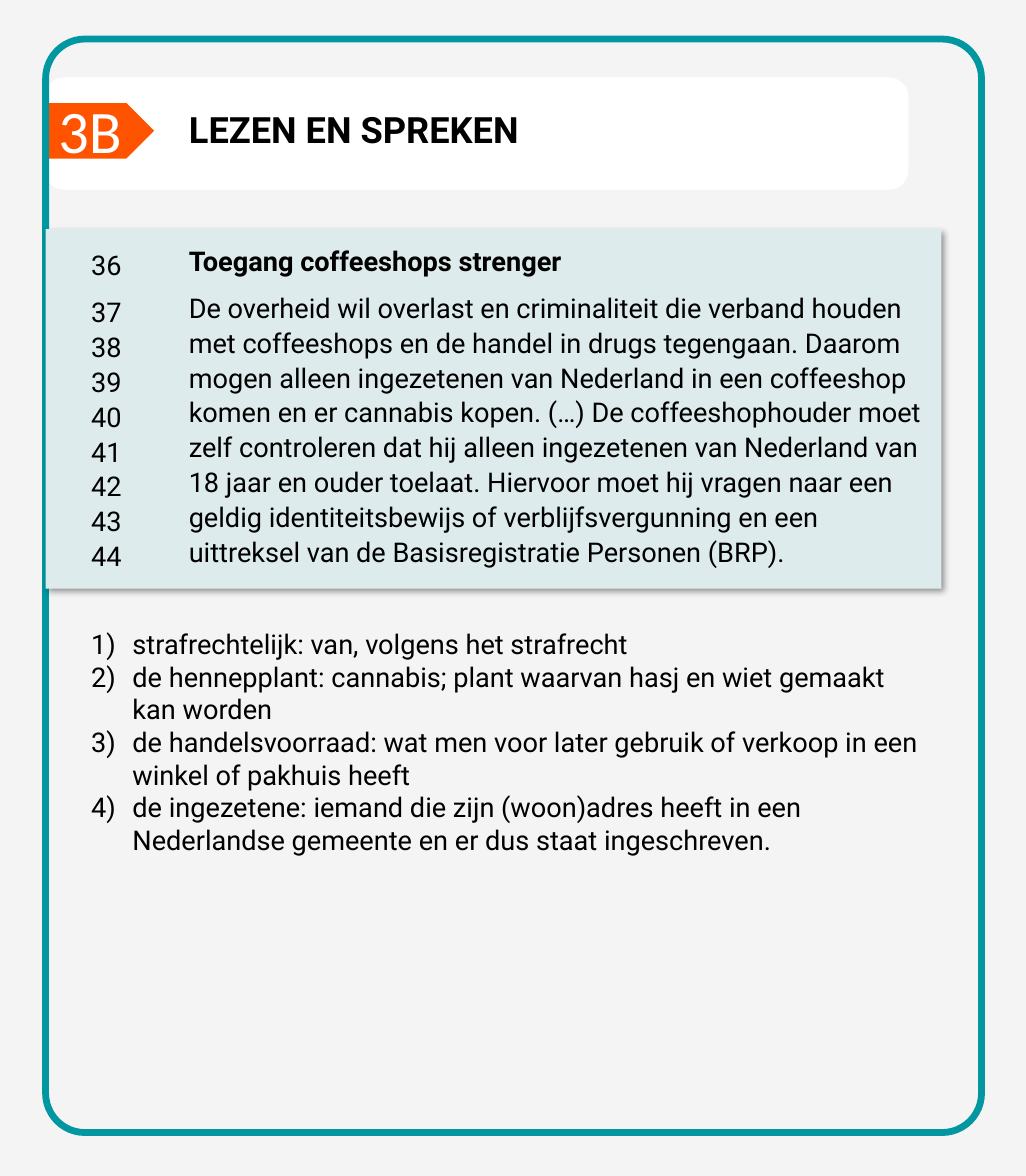
from lxml.etree import SubElement
from pptx import Presentation
from pptx.dml.color import RGBColor
from pptx.enum.shapes import MSO_SHAPE
from pptx.enum.text import MSO_ANCHOR, MSO_AUTO_SIZE, PP_ALIGN
from pptx.oxml.ns import qn
from pptx.util import Inches, Pt

WHITE, BLACK, ORANGE = "FFFFFF", "000000", "FF5300"
TEAL, PALE, GREY = "0097A1", "DEEBEC", "F4F4F4"

ARTICLE = (
    "De overheid wil overlast en criminaliteit die verband houden met coffeeshops "
    "en de handel in drugs tegengaan. Daarom mogen alleen ingezetenen van Nederland "
    "in een coffeeshop komen en er cannabis kopen. (…) De coffeeshophouder moet zelf "
    "controleren dat hij alleen ingezetenen van Nederland van 18 jaar en ouder "
    "toelaat. Hiervoor moet hij vragen naar een geldig identiteitsbewijs of "
    "verblijfsvergunning en een uittreksel van de Basisregistratie Personen (BRP)."
)
GLOSSARY = [
    "strafrechtelijk: van, volgens het strafrecht",
    "de hennepplant: cannabis; plant waarvan hasj en wiet gemaakt kan worden",
    "de handelsvoorraad: wat men voor later gebruik of verkoop in een winkel of "
    "pakhuis heeft",
    "de ingezetene: iemand die zijn (woon)adres heeft in een Nederlandse gemeente "
    "en er dus staat ingeschreven.",
]


def rgb(value):
    return RGBColor.from_string(value)


def apply(target, values):
    for name, value in values.items():
        setattr(target, name, value)


class Page:
    font = {"name": "Roboto", "size": Pt(18), "bold": False}
    frame = {"word_wrap": True, "auto_size": MSO_AUTO_SIZE.NONE,
             "vertical_anchor": MSO_ANCHOR.TOP}
    paragraph = {"alignment": PP_ALIGN.LEFT, "space_before": Pt(0)}
    prose = {"line_spacing": 1.07, "space_after": Pt(8)}

    def __init__(self, s):
        self.s = s
        s.background.fill.solid()
        s.background.fill.fore_color.rgb = rgb(GREY)

    def shape(self, kind, box, fill=None, line=None, width=1, corner=None):
        sp = self.s.shapes.add_shape(kind, *map(Inches, box))
        sp.shadow.inherit = False
        if corner is not None:
            sp.adjustments[0] = corner
        if fill:
            sp.fill.solid()
            sp.fill.fore_color.rgb = rgb(fill)
        else:
            sp.fill.background()
        if line:
            sp.line.color.rgb = rgb(line)
            sp.line.width = Pt(width)
        else:
            sp.line.fill.background()
        return sp

    def shadow(self, sp):
        effects = sp.element.spPr.find(qn("a:effectLst"))
        outer = SubElement(effects, qn("a:outerShdw"), blurRad=str(Pt(4)),
                           dist=str(Pt(3)), dir="2700000", algn="tl", rotWithShape="0")
        color = SubElement(outer, qn("a:srgbClr"), val=BLACK)
        SubElement(color, qn("a:alpha"), val="40000")

    def set_text(self, sp, texts, color=BLACK, layout={}, fonts=({},)):
        tf = sp.text_frame
        apply(tf, self.frame)
        for i, text in enumerate(texts):
            p = tf.add_paragraph() if i else tf.paragraphs[0]
            p.text = text
            apply(p, {**self.paragraph, **layout})
            for r in p.runs:
                apply(r.font, {**self.font, **fonts[min(i, len(fonts) - 1)]})
                r.font.color.rgb = rgb(color)

    def text(self, box, texts, **style):
        self.set_text(self.s.shapes.add_textbox(*map(Inches, box)), texts, **style)

    def placeholder(self, index, box, texts, **style):
        sp = self.s.placeholders[index]
        apply(sp, dict(zip(("left", "top", "width", "height"), map(Inches, box))))
        self.s.shapes.element.append(sp.element)
        self.set_text(sp, texts, **style)
        return sp

    def numbered(self, index, box, texts):
        sp = self.placeholder(index, box, texts)
        for p in sp.text_frame.paragraphs:
            props = p._p.get_or_add_pPr()
            props.set("marL", str(Inches(0.38)))
            props.set("indent", str(-Inches(0.38)))
            SubElement(props, qn("a:buFont"), typeface="+mj-lt")
            SubElement(props, qn("a:buAutoNum"), type="arabicParenR")


def main():
    prs = Presentation()
    prs.slide_width, prs.slide_height = Inches(9.45), Inches(10.83)
    page = Page(prs.slides.add_slide(prs.slide_layouts[1]))
    rounded = MSO_SHAPE.ROUNDED_RECTANGLE

    page.shape(rounded, (0.42, 0.72, 7.94, 1.02), fill=WHITE, line=WHITE)
    page.shape(MSO_SHAPE.PENTAGON, (0.42, 0.95, 1, 0.51), fill=ORANGE)
    page.text((0.44, 0.81, 0.82, 0.77), ["3B"], color=WHITE,
              fonts=[{"name": "Calibri", "size": Pt(40)}])
    page.placeholder(0, (1.64, 0.94, 6.88, 0.5), ["LEZEN EN SPREKEN"],
                     fonts=[{"size": Pt(24), "bold": True}])
    page.shape(rounded, (0.42, 0.36, 8.62, 10.07), line=TEAL, width=4.5, corner=0.042)

    panel = page.shape(rounded, (0.42, 2.11, 8.25, 3.31), fill=PALE, corner=0)
    page.shadow(panel)
    page.text((1.64, 2.18, 7.02, 3.11), ["Toegang coffeeshops strenger", ARTICLE],
              layout=page.prose, fonts=[{"bold": True}, {}])
    page.text((0.74, 2.22, 0.49, 3.11), ["36", "\v".join(map(str, range(37, 45)))],
              layout=page.prose)
    page.numbered(1, (0.74, 5.73, 7.92, 2.52), GLOSSARY)

    prs.save("out.pptx")


if __name__ == "__main__":
    main()
